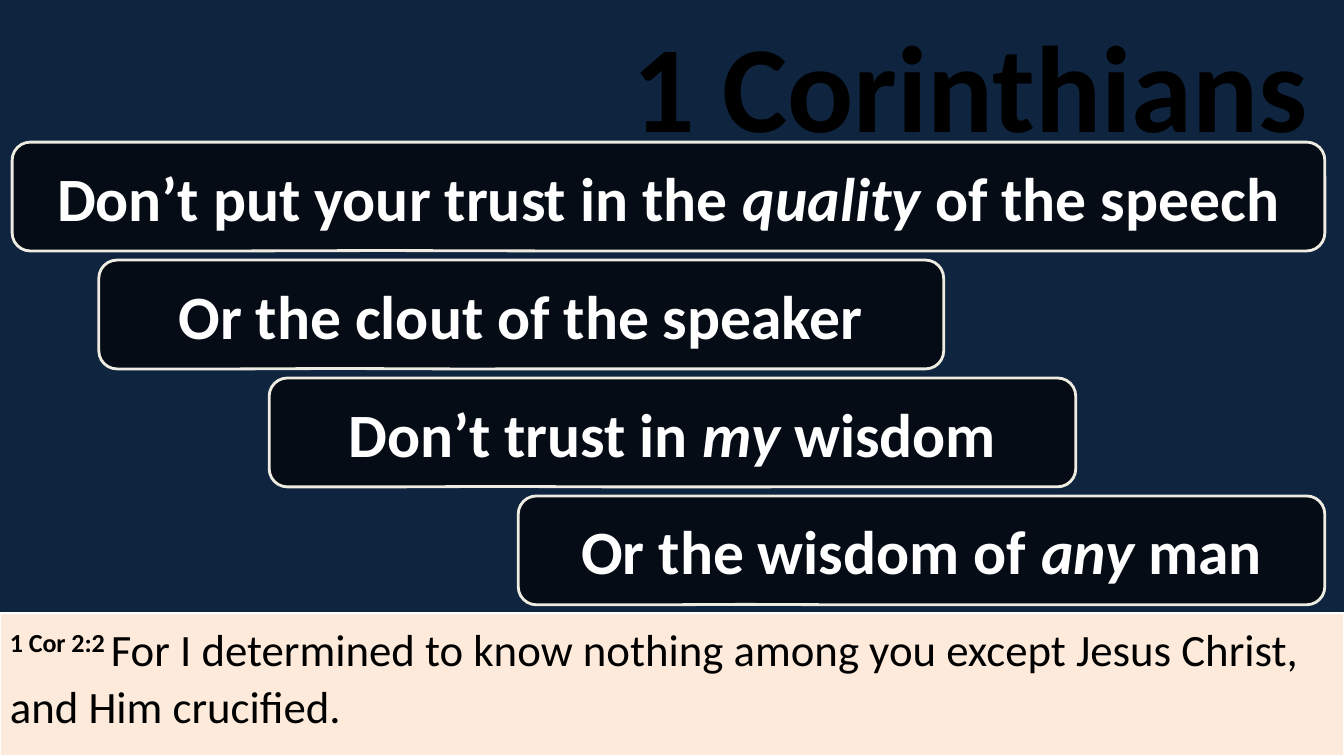
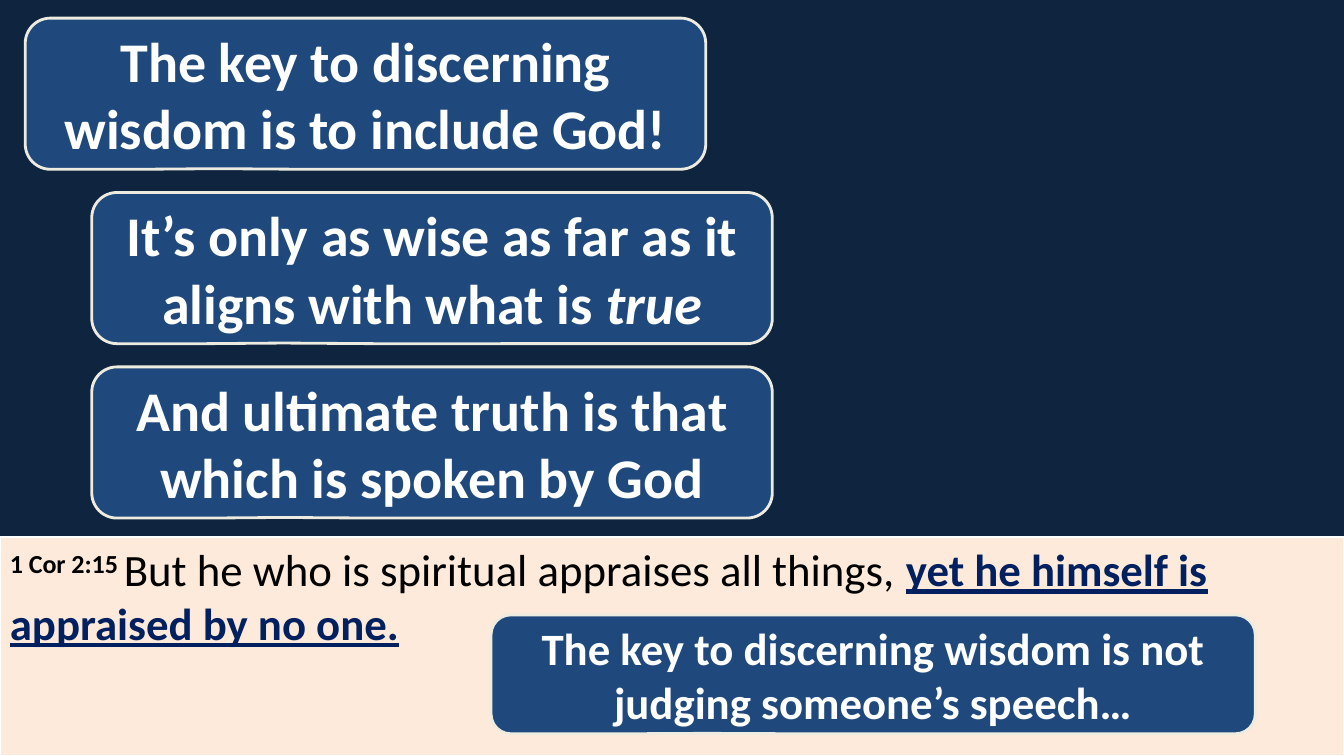
from pptx import Presentation
from pptx.dml.color import RGBColor
from pptx.enum.shapes import MSO_SHAPE
from pptx.enum.text import MSO_ANCHOR, MSO_AUTO_SIZE, PP_ALIGN
from pptx.oxml import parse_xml
from pptx.oxml.ns import nsdecls
from pptx.util import Inches, Pt

CALLOUT, RECTANGLE = MSO_SHAPE.ROUNDED_RECTANGULAR_CALLOUT, MSO_SHAPE.RECTANGLE
MIDDLE, TOP = MSO_ANCHOR.MIDDLE, MSO_ANCHOR.TOP
CENTER, LEFT = PP_ALIGN.CENTER, PP_ALIGN.LEFT
NO_FIT = MSO_AUTO_SIZE.NONE

FONT = "Calibri"
NAVY, BLUE, INK_BLUE = "0F243E", "1F497D", "002060"
BLACK, WHITE, IVORY, PEACH = "000000", "FFFFFF", "EEECE1", "FDEADA"
SLIDE_WIDTH, SLIDE_HEIGHT = 13.33, 7.5
CALLOUT_ADJUSTMENTS = (-0.219, 0.496, 0.167)

BOLD = {"bold": True}
ITALIC = {"bold": True, "italic": True}
REFERENCE = {"bold": True, "raised": 30}
STRESSED = {"bold": True, "underline": True, "colour": INK_BLUE}

SLIDES = [
    {
        "title": "1 Corinthians",
        "verse_top": 6.08,
        "line_spacing": 1.07,
        "verse": [
            ("1 Cor 2:2 ", REFERENCE),
            ("For I determined to know nothing among you except Jesus Christ, "
             "and Him crucified.", {}),
        ],
        "stack": {"top": 1.41, "step": 1.17, "height": 1.08, "size": 44,
                  "fill": BLACK, "opacity": 64},
        "points": [
            (0.12, 13.02, [("Don’t put your trust in the ", BOLD), ("quality", ITALIC),
                           (" of the speech", BOLD)]),
            (0.98, 8.38, [("Or the clout of the speaker", BOLD)]),
            (2.67, 8, [("Don’t trust in ", BOLD), ("my", ITALIC), (" wisdom", BOLD)]),
            (5.14, 8, [("Or the wisdom of ", BOLD), ("any", ITALIC), (" man", BOLD)]),
        ],
    },
    {
        "verse_top": 5.33,
        "line_spacing": 1.0,
        "verse": [
            ("1 Cor 2:15 ", REFERENCE),
            ("But he who is spiritual appraises all things, ", {}),
            ("yet he himself is appraised by no one.", STRESSED),
        ],
        "stack": {"top": 0.18, "step": 1.73, "height": 1.5, "size": 40, "fill": BLUE},
        "points": [
            (0.25, 6.75, [("The key to discerning wisdom is to include God!", BOLD)]),
            (0.91, 6.75, [("It’s only as wise as far as it aligns with what is ", BOLD),
                          ("true", ITALIC)]),
            (0.91, 6.75, [("And ultimate truth is that which is spoken by God", BOLD)]),
        ],
        "remark": ((4.87, 6.1, 7.58, 1.18),
                   [("The key to discerning wisdom is not judging someone’s speech…", BOLD)]),
    },
]


def rgb(colour):
    return RGBColor.from_string(colour)


def write(box, spans, size, colour, align, anchor, line_spacing=1.0):
    frame = box.text_frame
    frame.word_wrap = True
    frame.auto_size = NO_FIT
    frame.vertical_anchor = anchor
    para = frame.paragraphs[0]
    para.alignment = align
    para.line_spacing = line_spacing
    for text, style in spans:
        span = para.add_run()
        span.text = text
        font = span.font
        font.name, font.size = FONT, Pt(size)
        font.bold = style.get("bold", False)
        font.italic = style.get("italic", False)
        font.underline = style.get("underline", False)
        font.color.rgb = rgb(style.get("colour", colour))
        if "raised" in style:
            span._r.get_or_add_rPr().set("baseline", str(style["raised"] * 1000))


def add_panel(page, kind, place, fill, line, line_width):
    box = page.shapes.add_shape(kind, *map(Inches, place))
    box.shadow.inherit = False
    box.fill.solid()
    box.fill.fore_color.rgb = rgb(fill)
    box.line.color.rgb = rgb(line)
    box.line.width = Pt(line_width)
    return box


def add_title(page, text):
    title = page.shapes.title
    title.left, title.top = Inches(6.08), Inches(0.17)
    title.width, title.height = Inches(7.08), Inches(1.32)
    write(title, [(text, BOLD)], 88, BLACK, CENTER, MIDDLE)


def add_verse(page, top, spans, line_spacing):
    place = (0, top, SLIDE_WIDTH, SLIDE_HEIGHT - top)
    band = add_panel(page, RECTANGLE, place, PEACH, WHITE, 1.5)
    write(band, spans, 32, BLACK, LEFT, TOP, line_spacing)


def add_callout(page, place, spans, size, fill, opacity=100):
    box = add_panel(page, CALLOUT, place, fill, IVORY, 2)
    for index, value in enumerate(CALLOUT_ADJUSTMENTS):
        box.adjustments[index] = value
    if opacity < 100:
        colour = box.element.spPr.xpath("./a:solidFill/a:srgbClr")[0]
        colour.append(parse_xml(f'<a:alpha {nsdecls("a")} val="{opacity * 1000}"/>'))
    write(box, spans, size, WHITE, CENTER, MIDDLE)


def add_stack(page, points, top, step, height, **look):
    for row, (left, width, spans) in enumerate(points):
        add_callout(page, (left, top + row * step, width, height), spans, **look)


def main():
    deck = Presentation()
    deck.slide_width, deck.slide_height = Inches(SLIDE_WIDTH), Inches(SLIDE_HEIGHT)
    background = deck.slide_master.background.fill
    background.solid()
    background.fore_color.rgb = rgb(NAVY)
    title_only = deck.slide_layouts.get_by_name("Title Only")
    blank = deck.slide_layouts.get_by_name("Blank")
    for content in SLIDES:
        page = deck.slides.add_slide(title_only if "title" in content else blank)
        if "title" in content:
            add_title(page, content["title"])
        add_verse(page, content["verse_top"], content["verse"], content["line_spacing"])
        add_stack(page, content["points"], **content["stack"])
        if "remark" in content:
            place, spans = content["remark"]
            add_callout(page, place, spans, 32, BLUE)
    deck.save("out.pptx")


if __name__ == "__main__":
    main()
